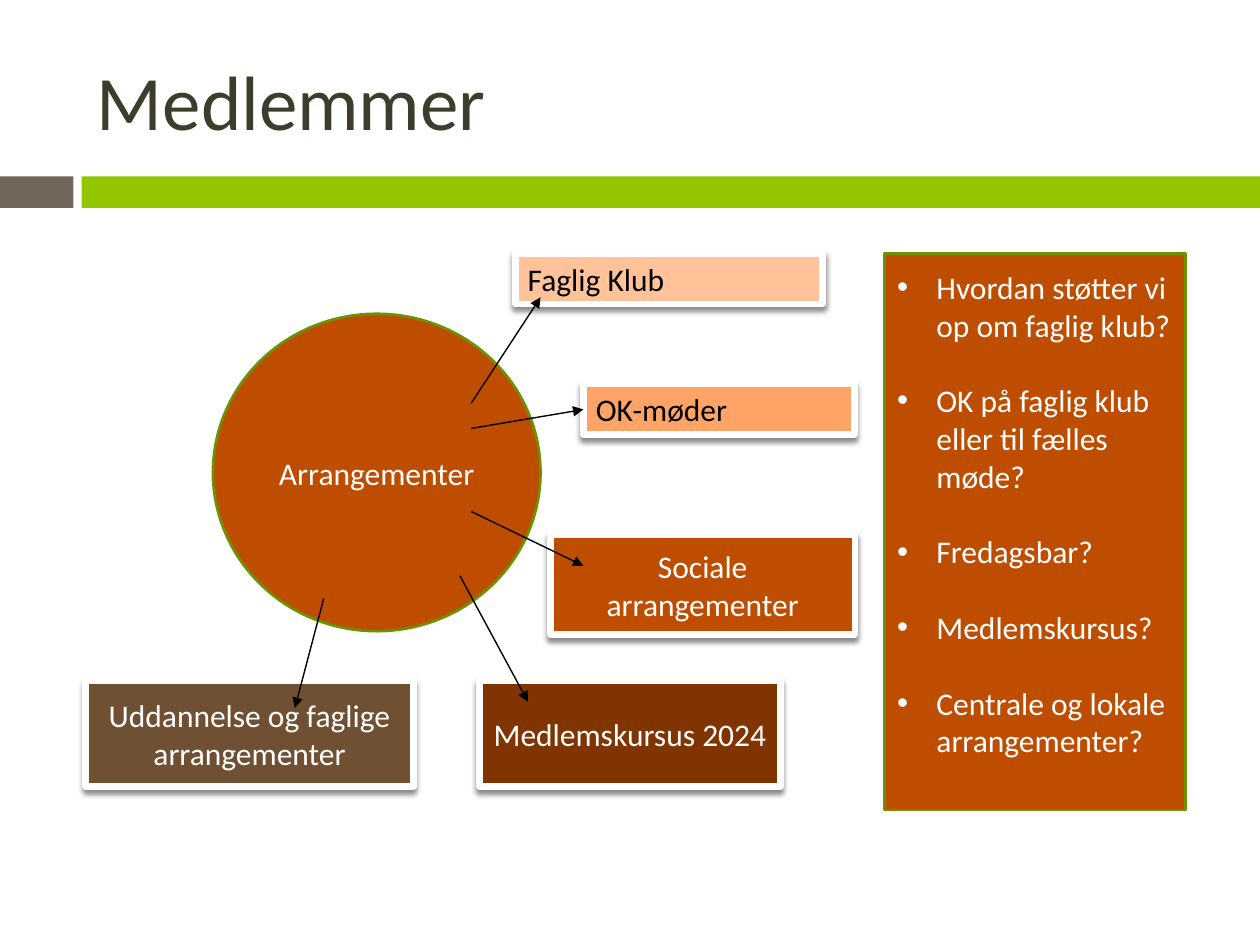
from lxml.etree import SubElement
from pptx import Presentation
from pptx.dml.color import RGBColor
from pptx.enum.shapes import MSO_CONNECTOR as Connector, MSO_SHAPE as Shape
from pptx.enum.text import MSO_ANCHOR as Anchor, MSO_AUTO_SIZE as AutoSize, PP_ALIGN as Align
from pptx.oxml.ns import qn
from pptx.util import Pt

FONT = "Calibri"
WHITE = RGBColor(0xFF, 0xFF, 0xFF)
BLACK = RGBColor(0, 0, 0)
TITLE_INK = RGBColor(0x3E, 0x3D, 0x2D)
STONE = RGBColor(0x71, 0x68, 0x5A)
LIME = RGBColor(0x94, 0xC6, 0x00)
OLIVE = RGBColor(0x6D, 0x92, 0x00)
RUST = RGBColor(0xBF, 0x4D, 0x00)
PEACH = RGBColor(0xFF, 0xC2, 0x99)
ORANGE = RGBColor(0xFF, 0xA4, 0x66)
DARK_RUST = RGBColor(0x80, 0x34, 0x00)
BROWN = RGBColor(0x70, 0x50, 0x32)

QUESTIONS = [
    "Hvordan støtter vi op om faglig klub?",
    "OK på faglig klub eller til fælles møde?",
    "Fredagsbar?",
    "Medlemskursus?",
    "Centrale og lokale arrangementer?",
]
ACTIVITIES = [
    ("Faglig Klub", (294.5, 144.7, 175.7, 29), PEACH, BLACK, Align.LEFT, (269.3, 230.4, 308.9, 169.9)),
    ("OK-møder", (333.4, 219.2, 154.8, 29), ORANGE, BLACK, Align.LEFT, (269.3, 244.8, 333.4, 234)),
    ("Sociale arrangementer", (314.6, 305.6, 174, 56.9), RUST, WHITE, Align.CENTER, (269.3, 292.3, 333.4, 323.3)),
    ("Medlemskursus 2024", (274, 389, 172, 60.5), DARK_RUST, WHITE, Align.CENTER, (262.8, 329, 301.7, 401)),
    ("Uddannelse og faglige arrangementer", (49, 389, 187.2, 60.5), BROWN, WHITE, Align.CENTER,
     (185, 342, 168.5, 404.6)),
]


def place(element, box):
    """Move and size an element to a box in points."""
    element.left, element.top, element.width, element.height = map(Pt, box)


def style_paragraph(paragraph, size, color, align):
    """Set the font and alignment of a paragraph."""
    paragraph.font.name = FONT
    paragraph.font.size = Pt(size)
    paragraph.font.color.rgb = color
    paragraph.alignment = align


def paint(element, fill, outline=None, weight=1.5):
    """Give an element a solid fill and an optional outline."""
    element.fill.solid()
    element.fill.fore_color.rgb = fill
    if outline is None:
        element.line.fill.background()
    else:
        element.line.color.rgb = outline
        element.line.width = Pt(weight)


def add_block(shapes, kind, box, fill, outline=None, weight=1.5):
    """Add a filled preset shape without a shadow."""
    block = shapes.add_shape(kind, *map(Pt, box))
    paint(block, fill, outline, weight)
    block.shadow.inherit = False
    return block


def add_label(block, text, color, align):
    """Write one vertically centred paragraph in a block."""
    frame = block.text_frame
    frame.word_wrap = True
    frame.vertical_anchor = Anchor.MIDDLE
    frame.text = text
    style_paragraph(frame.paragraphs[0], 18, color, align)


def add_drop_shadow(block):
    """Cast a soft shadow straight below a block."""
    effects = block._element.spPr.find(qn("a:effectLst"))
    shadow = SubElement(effects, qn("a:outerShdw"), blurRad=str(Pt(3)), dist=str(Pt(2.4)),
                        dir="5400000", algn="ctr", rotWithShape="0")
    tint = SubElement(shadow, qn("a:srgbClr"), val=str(BLACK))
    SubElement(tint, qn("a:alpha"), val="45000")


def add_arrow(shapes, ends):
    """Draw a thin black arrow between two points."""
    arrow = shapes.add_connector(Connector.STRAIGHT, *map(Pt, ends))
    arrow.line.color.rgb = BLACK
    arrow.line.width = Pt(0.79)
    properties = arrow._element.spPr
    SubElement(properties.find(qn("a:ln")), qn("a:tailEnd"), type="triangle")
    SubElement(properties, qn("a:effectLst"))


def add_activity(slide, text, box, fill, ink, align, ends):
    """Group a framed activity box with the arrow that leads to it."""
    shapes = slide.shapes.add_group_shape().shapes
    activity = add_block(shapes, Shape.RECTANGLE, box, fill, WHITE, 3.75)
    add_drop_shadow(activity)
    add_label(activity, text, ink, align)
    add_arrow(shapes, ends)


def fill_title(title, text):
    """Place and format the slide title."""
    place(title, (48.2, 18, 661.4, 77.8))
    title.text_frame.text = text
    title.text_frame.vertical_anchor = Anchor.MIDDLE
    style_paragraph(title.text_frame.paragraphs[0], 44, TITLE_INK, Align.LEFT)


def fill_questions(panel, questions):
    """Turn the body placeholder into a coloured panel of bulleted questions."""
    place(panel, (505.4, 144.7, 172.1, 318.2))
    paint(panel, RUST, OLIVE)
    frame = panel.text_frame
    frame.text = "\n".join(questions)
    frame.word_wrap = True
    frame.auto_size = AutoSize.NONE
    frame.vertical_anchor = Anchor.TOP
    frame.margin_top = Pt(8.3)
    for paragraph in frame.paragraphs:
        style_paragraph(paragraph, 18, WHITE, Align.LEFT)
        paragraph.space_before = Pt(0)
        paragraph.space_after = Pt(21.6)
        indent = Pt(22.5)
        properties = paragraph._p.get_or_add_pPr()
        properties.set("marL", str(indent))
        properties.set("indent", str(-indent))
        SubElement(properties, qn("a:buChar"), char="•")


def main():
    """Build and save the slide."""
    deck = Presentation()
    deck.slide_width, deck.slide_height = Pt(720), Pt(540)
    slide = deck.slides.add_slide(deck.slide_layouts[1])
    fill_title(slide.shapes.title, "Medlemmer")
    fill_questions(slide.placeholders[1], QUESTIONS)

    add_block(slide.shapes, Shape.RECTANGLE, (0, 100.8, 42, 18), STONE)
    add_block(slide.shapes, Shape.RECTANGLE, (46.6, 100.8, 673.4, 18), LIME)

    hub = add_block(slide.shapes, Shape.OVAL, (121.7, 179.3, 187.2, 181.4), RUST, OLIVE)
    add_label(hub, "Arrangementer", WHITE, Align.CENTER)
    for activity in ACTIVITIES:
        add_activity(slide, *activity)

    deck.save("out.pptx")


if __name__ == "__main__":
    main()
